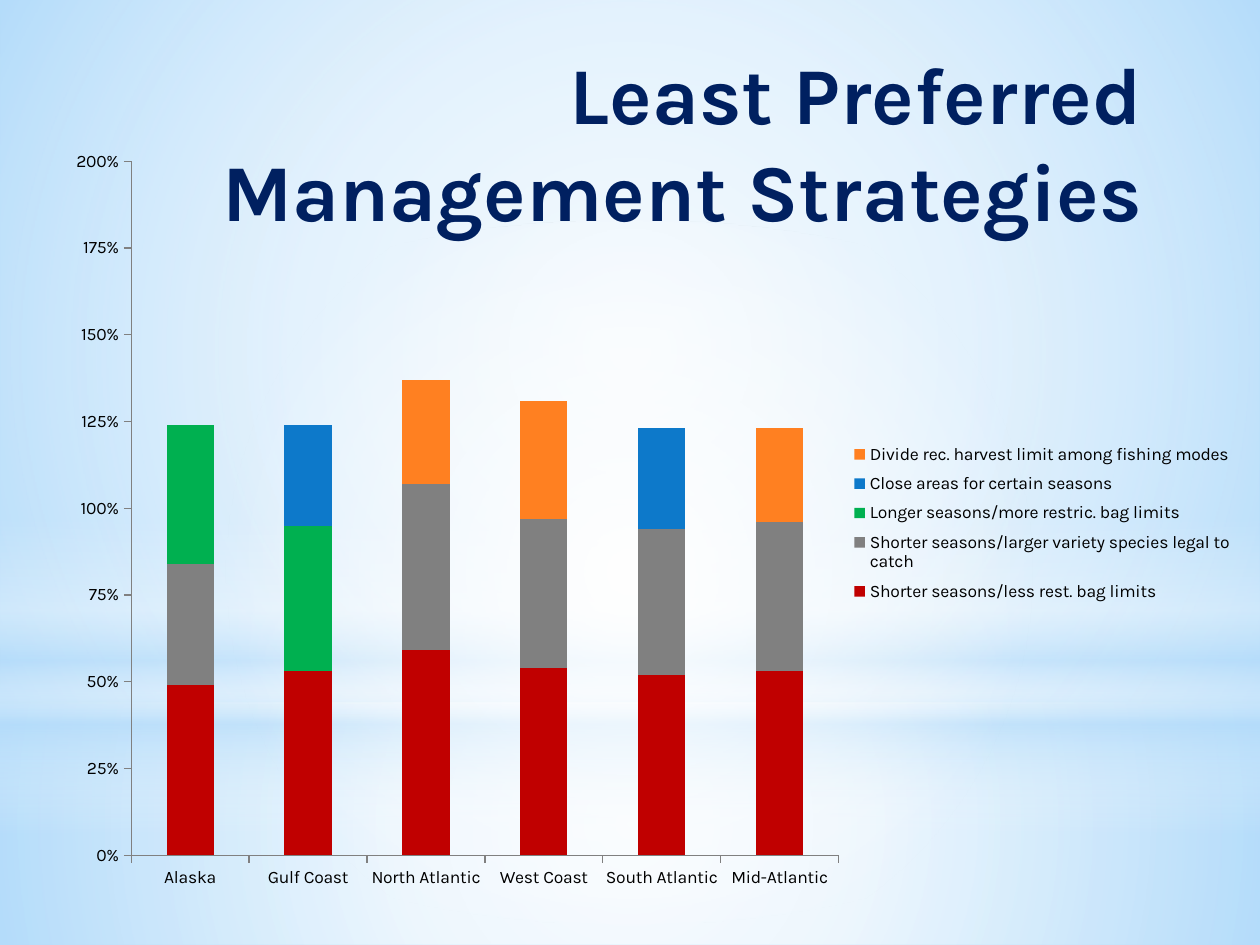
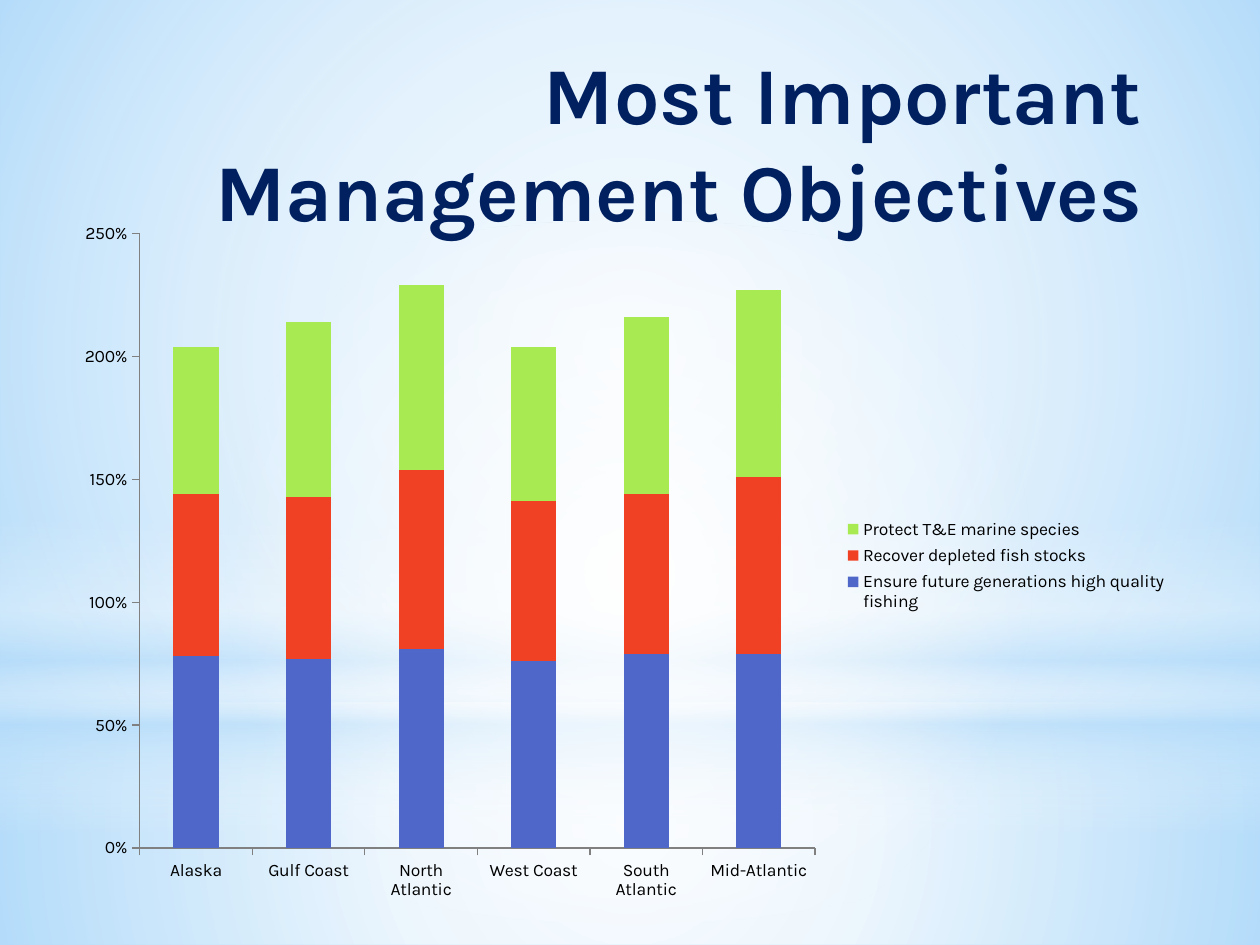
from pptx import Presentation
from pptx.chart.data import CategoryChartData
from pptx.dml.color import RGBColor
from pptx.enum.chart import XL_CHART_TYPE as ChartType, XL_LEGEND_POSITION as LegendPosition
from pptx.enum.chart import XL_TICK_MARK as TickMark
from pptx.enum.shapes import MSO_SHAPE as Preset
from pptx.enum.text import MSO_ANCHOR as Anchor, PP_ALIGN as Align
from pptx.oxml import parse_xml
from pptx.oxml.ns import nsdecls
from pptx.util import Inches, Pt

FONT = "Karla"
WHITE, SKY, NAVY, BLACK, AXIS_GRAY = "FFFFFF", "B4DCFA", "002060", "000000", "808080"
REGIONS = ["Alaska", "Gulf Coast", "North Atlantic", "West Coast", "South Atlantic", "Mid-Atlantic"]

CIRCLE = '<a:path path="circle"><a:fillToRect l="50000" t="50000" r="50000" b="50000"/></a:path>'
DOWNWARD = '<a:lin ang="5400000" scaled="0"/>'

# Preset, box, direction, stops as (position %, colour, opacity %)
BACKDROP = [
    (Preset.RECTANGLE, (0, 5.58, 10, 1.92), CIRCLE,
     [(0, WHITE, 91), (37, WHITE, 76), (100, SKY, 79)]),
    (Preset.RECTANGLE, (0, 0, 10, 5.58), CIRCLE,
     [(0, WHITE, 89), (48, WHITE, 62), (100, SKY, 79)]),
    (Preset.RECTANGLE, (0, 4.12, 10, 2.5), DOWNWARD,
     [(0, WHITE, 0), (29, WHITE, 30), (45, SKY, 40), (55, WHITE, 26), (65, SKY, 60), (100, WHITE, 0)]),
    (Preset.OVAL, (0, 1.75, 10, 5.58), CIRCLE, [(0, WHITE, 100), (56, WHITE, 0)]),
]

# Series as name, colour, values; plot and legend areas as fractions of the chart
LEAST_PREFERRED = dict(
    box=(0.42, 1.08, 9.42, 6.08), maximum=2, step=0.25,
    plot_area=(0.066, 0.033, 0.596, 0.906), legend_area=(0.68, 0.39, 0.32, 0.23),
    series=[
        ("Shorter seasons/less rest. bag limits", "C00000", (0.49, 0.53, 0.59, 0.54, 0.52, 0.53)),
        ("Shorter seasons/larger variety species legal to catch", "808080",
         (0.35, None, 0.48, 0.43, 0.42, 0.43)),
        ("Longer seasons/more restric. bag limits", "00B050", (0.4, 0.42, None, None, None, None)),
        ("Close areas for certain seasons", "0D79CA", (None, 0.29, None, None, 0.29, None)),
        ("Divide rec. harvest limit among fishing modes", "FF8021",
         (None, None, 0.3, 0.34, None, 0.27)),
    ])
MOST_IMPORTANT = dict(
    box=(0.5, 1.67, 8.83, 5.58), maximum=2.5, step=0.5,
    plot_area=(0.069, 0.033, 0.607, 0.874), legend_area=(0.695, 0.43, 0.305, 0.15),
    series=[
        ("Ensure future generations high quality fishing", "4E67C8",
         (0.78, 0.77, 0.81, 0.76, 0.79, 0.79)),
        ("Recover depleted fish stocks", "F14124", (0.66, 0.66, 0.73, 0.65, 0.65, 0.72)),
        ("Protect T&E marine species", "A7EA52", (0.6, 0.71, 0.75, 0.63, 0.72, 0.76)),
    ])


def color(hex_string):
    return RGBColor.from_string(hex_string)


def inches(box):
    return [Inches(length) for length in box]


def gradient(stops, direction):
    stop_xml = "".join(
        f'<a:gs pos="{position * 1000}"><a:srgbClr val="{hex_string}">'
        f'<a:alpha val="{opacity * 1000}"/></a:srgbClr></a:gs>'
        for position, hex_string, opacity in stops)
    return parse_xml(f'<a:gradFill {nsdecls("a")} rotWithShape="1">'
                     f'<a:gsLst>{stop_xml}</a:gsLst>{direction}</a:gradFill>')


def manual_layout(area, inner=False):
    """Return a c:layout that pins a chart part to fractions of the chart."""
    target = '<c:layoutTarget val="inner"/>' if inner else ""
    modes = "".join(f'<c:{side}Mode val="edge"/>' for side in "xy")
    places = "".join(f'<c:{side} val="{value}"/>' for side, value in zip("xywh", area))
    return parse_xml(f'<c:layout {nsdecls("c")}><c:manualLayout>{target}{modes}{places}'
                     '</c:manualLayout></c:layout>')


class Deck:
    def __init__(self):
        self.presentation = Presentation()
        self.presentation.slide_width, self.presentation.slide_height = Inches(10), Inches(7.5)
        self.slide = None

    def add_slide(self):
        self.slide = self.presentation.slides.add_slide(self.presentation.slide_layouts[6])
        fill = self.slide.background.fill
        fill.solid()
        fill.fore_color.rgb = color(SKY)
        for backdrop_shape in BACKDROP:
            self.add_glow(*backdrop_shape)

    def add_glow(self, preset, box, direction, stops):
        shape = self.slide.shapes.add_shape(preset, *inches(box))
        shape.shadow.inherit = False
        shape.line.fill.background()
        shape.fill.background()
        properties = shape.element.spPr
        properties.replace(properties.find("{*}noFill"), gradient(stops, direction))

    def add_title(self, text):
        text_frame = self.slide.shapes.add_textbox(*inches((0.58, 0.25, 8.58, 1.25))).text_frame
        text_frame.word_wrap = True
        text_frame.vertical_anchor = Anchor.TOP
        text_frame.margin_top = Inches(0.1)
        text_frame.text = text
        paragraph = text_frame.paragraphs[0]
        paragraph.alignment = Align.RIGHT
        font = paragraph.runs[0].font
        font.name, font.size, font.bold = FONT, Pt(46), True
        font.color.rgb = color(NAVY)

    def add_stacked_columns(self, box, maximum, step, plot_area, legend_area, series):
        data = CategoryChartData(number_format="0%")
        data.categories = REGIONS
        for name, _, values in series:
            data.add_series(name, values)
        chart = self.slide.shapes.add_chart(ChartType.COLUMN_STACKED, *inches(box), data).chart
        chart.has_title = False
        chart.font.name, chart.font.size = FONT, Pt(10)
        chart.font.color.rgb = color(BLACK)

        plot = chart.plots[0]
        plot.gap_width, plot.overlap, plot.vary_by_categories = 150, 100, False
        for plotted, (_, hex_string, _) in zip(plot.series, series):
            plotted.format.fill.solid()
            plotted.format.fill.fore_color.rgb = color(hex_string)

        for axis in (chart.category_axis, chart.value_axis):
            axis.has_major_gridlines = False
            axis.major_tick_mark, axis.minor_tick_mark = TickMark.OUTSIDE, TickMark.NONE
            axis.format.line.color.rgb = color(AXIS_GRAY)
            axis.format.line.width = Pt(0.75)
        value_axis = chart.value_axis
        value_axis.minimum_scale, value_axis.maximum_scale = 0, maximum
        value_axis.major_unit = step
        value_axis.tick_labels.number_format = "0%"
        value_axis.tick_labels.number_format_is_linked = False

        chart.has_legend = True
        legend = chart.legend
        legend.position, legend.include_in_layout = LegendPosition.RIGHT, False
        self.place_chart_parts(chart, plot_area, legend_area)

    @staticmethod
    def place_chart_parts(chart, plot_area, legend_area):
        chart_element = chart.element.find("{*}chart")
        plot_element = chart_element.find("{*}plotArea")
        legend_element = chart_element.find("{*}legend")
        for parent in (plot_element, legend_element):
            for layout in parent.findall("{*}layout"):
                parent.remove(layout)
        plot_element.insert(0, manual_layout(plot_area, inner=True))
        legend_element.find("{*}legendPos").addnext(manual_layout(legend_area))


def main():
    deck = Deck()
    for title, chart in (("Least Preferred Management Strategies", LEAST_PREFERRED),
                         ("Most Important Management Objectives", MOST_IMPORTANT)):
        deck.add_slide()
        deck.add_title(title)
        deck.add_stacked_columns(**chart)
    deck.presentation.save("out.pptx")


if __name__ == "__main__":
    main()
